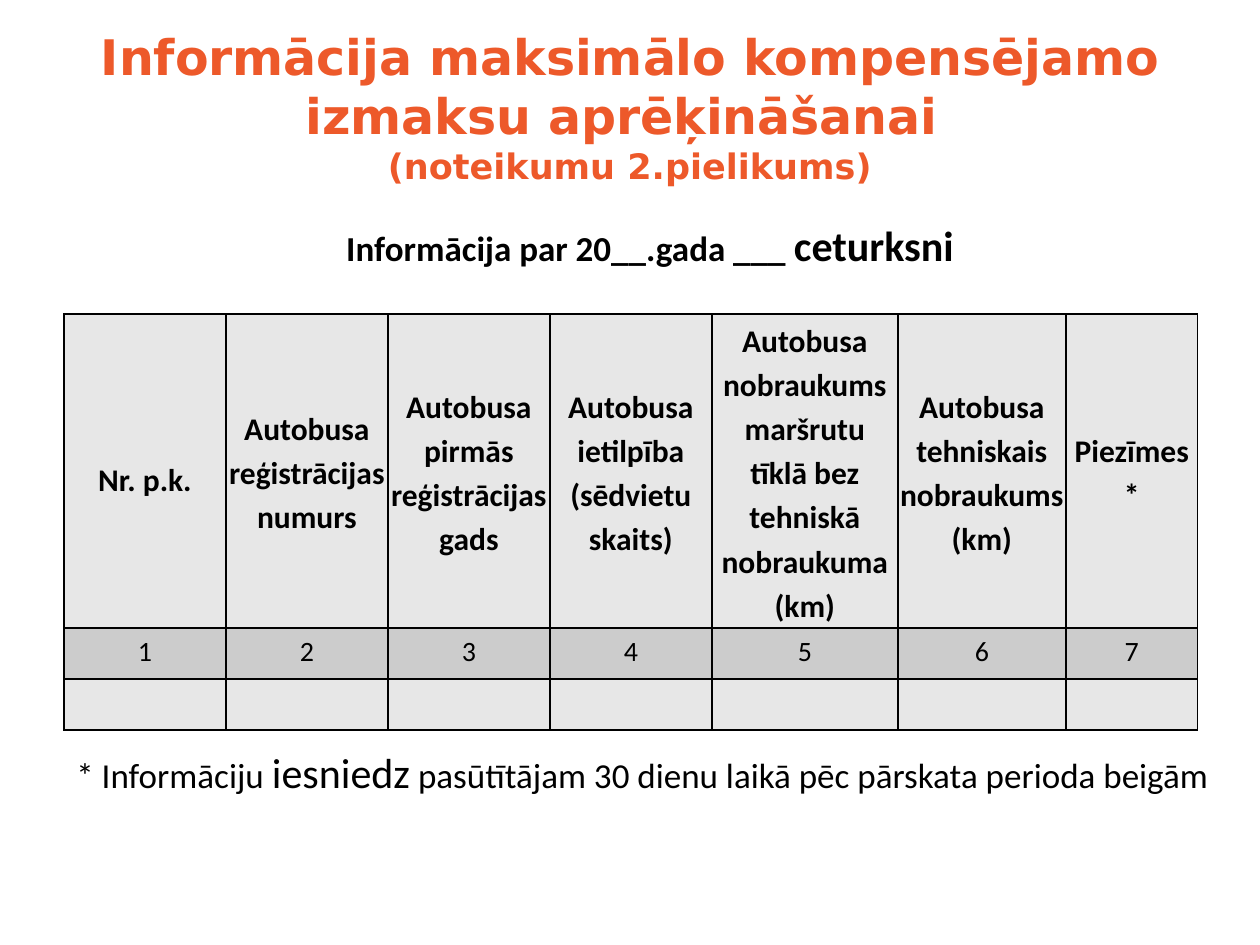
"""Build the slide on information for calculating compensable bus costs."""
from dataclasses import dataclass

from lxml import etree
from pptx import Presentation
from pptx.dml.color import RGBColor
from pptx.enum.text import MSO_ANCHOR, PP_ALIGN
from pptx.oxml.ns import qn
from pptx.util import Emu, Pt

CENTER, LEFT = PP_ALIGN.CENTER, PP_ALIGN.LEFT
TOP, MIDDLE = MSO_ANCHOR.TOP, MSO_ANCHOR.MIDDLE
PX_PER_INCH = 126


@dataclass(frozen=True)
class Theme:
    """Colours, fonts and type sizes."""
    accent: str = "ED592A"
    ink: str = "000000"
    light: str = "E7E7E7"
    dark: str = "CCCCCC"
    title_font: str = "DejaVu Sans"
    body_font: str = "Calibri"
    title: int = 28
    emphasis: int = 24
    body: int = 20
    header: int = 18
    cell: int = 16
    border: int = 1


def px(length):
    """Turn whole pixels into EMU."""
    return Emu(round(length * 914400 / PX_PER_INCH))


def write(frame, runs, *, font, color, bold=False, align=LEFT, spacing=None, after=None):
    """Fill the first paragraph with (text, size) runs."""
    paragraph = frame.paragraphs[0]
    paragraph.alignment = align
    if spacing:
        paragraph.line_spacing = spacing
    if after:
        paragraph.space_after = Pt(after)
    for index, (text, size) in enumerate(runs):
        for part, line in enumerate(text.split("\n")):
            if part:
                paragraph.add_line_break()
            if line:
                run = paragraph.add_run()
                run.text = line
                run.font.name = font
                run.font.size = Pt(size)
                run.font.bold = bold
                run.font.color.rgb = RGBColor.from_string(color)


class SlideBuilder:
    """Holds the theme and the current slide."""

    def __init__(self, slide, theme):
        """Keep the slide and its theme."""
        self.slide = slide
        self.theme = theme

    def text(self, box, runs, *, anchor=TOP, bottom_inset=6, **style):
        """Add a wrapping text box."""
        frame = self.slide.shapes.add_textbox(*map(px, box)).text_frame
        frame.word_wrap = True
        frame.vertical_anchor = anchor
        frame.margin_top, frame.margin_bottom = px(6), px(bottom_inset)
        write(frame, runs, **style)

    def border(self, cell):
        """Draw all four borders of a cell."""
        properties = cell._tc.get_or_add_tcPr()
        for index, side in enumerate(("a:lnL", "a:lnR", "a:lnT", "a:lnB")):
            line = etree.Element(qn(side), w=str(Pt(self.theme.border)))
            fill = etree.SubElement(line, qn("a:solidFill"))
            etree.SubElement(fill, qn("a:srgbClr"), val=self.theme.ink)
            properties.insert(index, line)

    def cell(self, cell, text, *, fill, size, bold=False, anchor=TOP, spacing=1.15, after=10):
        """Format one table cell and write its text."""
        cell.fill.solid()
        cell.fill.fore_color.rgb = RGBColor.from_string(fill)
        cell.margin_left = cell.margin_right = px(2)
        cell.margin_top = cell.margin_bottom = px(2)
        cell.vertical_anchor = anchor
        self.border(cell)
        cell.text_frame.paragraphs[0].font.size = Pt(size)
        write(cell.text_frame, [(text, size)], font=self.theme.body_font,
              color=self.theme.ink, bold=bold, align=CENTER, spacing=spacing, after=after)

    def table(self, left, top, widths, heights, headings):
        """Add the table with headings, column numbers and an empty row."""
        theme = self.theme
        frame = self.slide.shapes.add_table(
            len(heights), len(widths), px(left), px(top), px(sum(widths)), px(sum(heights)))
        table = frame.table
        table.first_row = table.horz_banding = False
        for row, height in zip(table.rows, heights):
            row.height = px(height)
        for index, (width, heading) in enumerate(zip(widths, headings)):
            table.columns[index].width = px(width)
            layout = {"spacing": 1.15, "after": 10} if index else {"spacing": 1.5, "after": None}
            self.cell(table.cell(0, index), heading, fill=theme.light, size=theme.header,
                      bold=True, anchor=MIDDLE, **layout)
            self.cell(table.cell(1, index), str(index + 1), fill=theme.dark, size=theme.cell)
            self.cell(table.cell(2, index), "", fill=theme.light, size=theme.cell)


def main():
    """Build and save the slide."""
    theme = Theme()
    presentation = Presentation()
    presentation.slide_width, presentation.slide_height = px(1260), px(945)
    builder = SlideBuilder(presentation.slides.add_slide(presentation.slide_layouts[6]), theme)
    body = {"font": theme.body_font, "color": theme.ink}

    builder.text((63, 38, 1134, 157), [
        ("Informācija maksimālo kompensējamo izmaksu aprēķināšanai \n", theme.title),
        ("(noteikumu 2.pielikums)", theme.body),
    ], anchor=MIDDLE, bottom_inset=26, font=theme.title_font, color=theme.accent,
        bold=True, align=CENTER)
    builder.table(64, 314, [162] * 4 + [186, 168, 132], [314, 51, 51], [
        "Nr. p.k.",
        "Autobusa reģistrācijas numurs",
        "Autobusa pirmās reģistrācijas gads",
        "Autobusa ietilpība (sēdvietu skaits)",
        "Autobusa nobraukums maršrutu tīklā bez tehniskā nobraukuma (km)",
        "Autobusa tehniskais nobraukums (km)",
        "Piezīmes*",
    ])
    builder.text((243, 214, 814, 102), [
        ("Informācija par 20__.gada ___ ", theme.body),
        ("ceturksni", theme.emphasis),
    ], bold=True, align=CENTER, **body)
    builder.text((64, 741, 1171, 63), [
        ("* Informāciju ", theme.body),
        ("iesniedz", theme.emphasis),
        (" pasūtītājam 30 dienu laikā pēc pārskata perioda beigām", theme.body),
    ], **body)
    presentation.save("out.pptx")


if __name__ == "__main__":
    main()
